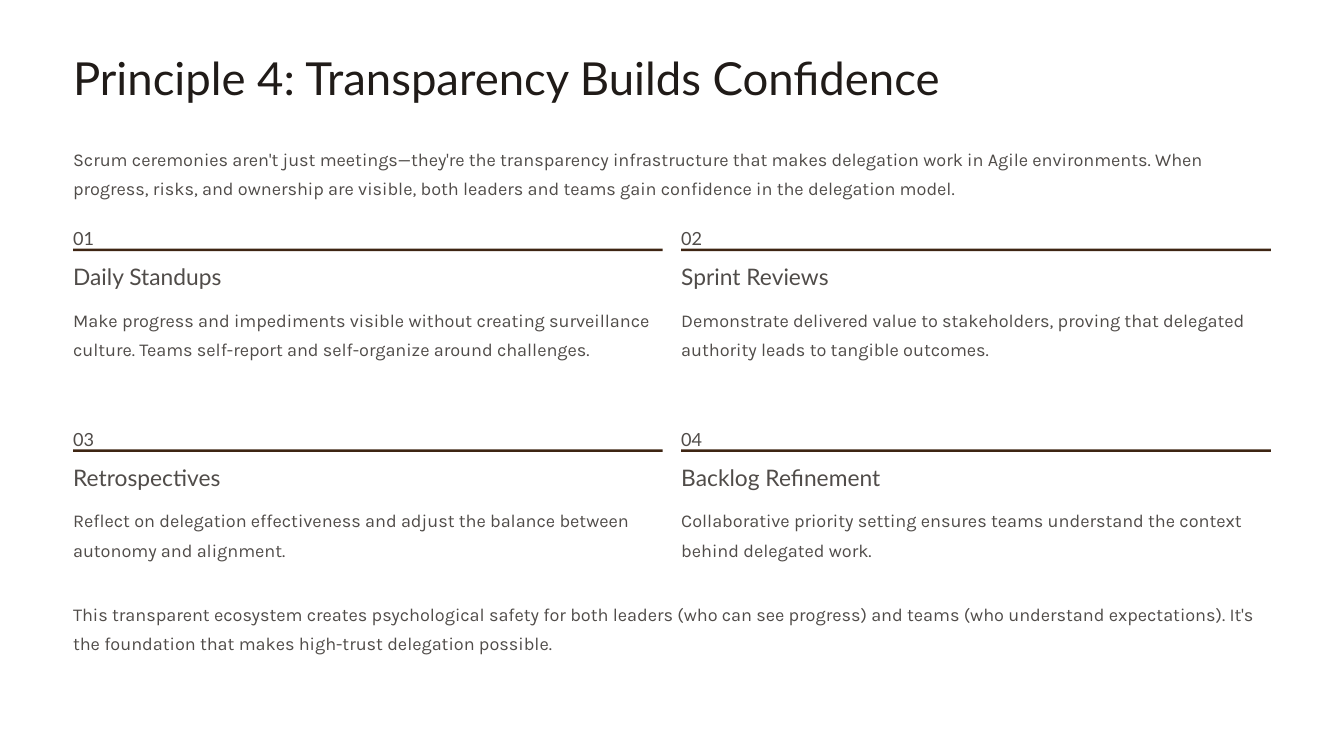
from dataclasses import dataclass

from pptx import Presentation
from pptx import util as u
from pptx.dml.color import RGBColor
from pptx.enum import shapes, text

PX = u.Inches(1) // 100
COLORS = {"title": "201B18", "body": "504C49", "rule": "3E2513"}

LEFT, FULL_WIDTH = 87, 1426
CARD_WIDTH, COLUMN_PITCH = 702, 724
CARDS_TOP, ROW_PITCH = 262, 239


@dataclass(frozen=True)
class Style:
    font: str
    size: float
    leading: float
    color: str
    wrap: bool


@dataclass(frozen=True)
class Ceremony:
    name: str
    description: str


TITLE = Style("Lato", 39, 48.5, "title", False)
NUMBER = Style("Lato", 15.5, 25, "body", False)
HEADING = Style("Lato", 19.5, 24, "body", False)
BODY = Style("Karla", 15.5, 25, "body", True)

INTRO = (
    "Scrum ceremonies aren't just meetings—they're the transparency infrastructure "
    "that makes delegation work in Agile environments. When progress, risks, and "
    "ownership are visible, both leaders and teams gain confidence in the delegation model."
)
CONCLUSION = (
    "This transparent ecosystem creates psychological safety for both leaders (who can "
    "see progress) and teams (who understand expectations). It's the foundation that "
    "makes high-trust delegation possible."
)
CEREMONIES = [
    Ceremony("Daily Standups",
             "Make progress and impediments visible without creating surveillance culture. "
             "Teams self-report and self-organize around challenges."),
    Ceremony("Sprint Reviews",
             "Demonstrate delivered value to stakeholders, proving that delegated authority "
             "leads to tangible outcomes."),
    Ceremony("Retrospectives",
             "Reflect on delegation effectiveness and adjust the balance between autonomy "
             "and alignment."),
    Ceremony("Backlog Refinement",
             "Collaborative priority setting ensures teams understand the context behind "
             "delegated work."),
]


def box(left: int, top: int, width: int, height: int) -> tuple[int, int, int, int]:
    """Convert a px rectangle to EMU."""
    return left * PX, top * PX, width * PX, height * PX


def write(shape, content: str, style: Style) -> None:
    frame = shape.text_frame
    frame.text = content
    frame.auto_size = text.MSO_AUTO_SIZE.NONE
    frame.word_wrap = style.wrap
    frame.vertical_anchor = text.MSO_ANCHOR.TOP
    frame.margin_left = frame.margin_top = frame.margin_right = frame.margin_bottom = 0
    paragraph = frame.paragraphs[0]
    paragraph.alignment = text.PP_ALIGN.LEFT
    paragraph.line_spacing = u.Pt(style.leading)
    font = paragraph.runs[0].font
    font.name, font.size = style.font, u.Pt(style.size)
    font.color.rgb = RGBColor.from_string(COLORS[style.color])


def add_text(slide, area: tuple[int, int, int, int], content: str, style: Style) -> None:
    write(slide.shapes.add_textbox(*box(*area)), content, style)


def add_rule(slide, left: int, top: int) -> None:
    rule = slide.shapes.add_shape(
        shapes.MSO_SHAPE.RECTANGLE, *box(left, top, CARD_WIDTH, 3))
    rule.shadow.inherit = False
    rule.fill.solid()
    rule.fill.fore_color.rgb = RGBColor.from_string(COLORS["rule"])
    rule.line.fill.background()


def add_card(slide, index: int, ceremony: Ceremony) -> None:
    row, column = divmod(index, 2)
    left = LEFT + column * COLUMN_PITCH
    top = CARDS_TOP + row * ROW_PITCH
    add_text(slide, (left, top, 22, 27), f"{index + 1:02}", NUMBER)
    add_rule(slide, left, top + 34)
    add_text(slide, (left, top + 50, 271, 34), ceremony.name, HEADING)
    add_text(slide, (left, top + 97, CARD_WIDTH, 69), ceremony.description, BODY)


def main() -> None:
    deck = Presentation()
    deck.slide_width, deck.slide_height = 1600 * PX, 900 * PX
    slide = deck.slides.add_slide(deck.slide_layouts.get_by_name("Title Only"))

    title = slide.shapes.title
    title.left, title.top, title.width, title.height = box(LEFT, 57, 1169, 68)
    write(title, "Principle 4: Transparency Builds Confidence", TITLE)

    add_text(slide, (LEFT, 168, FULL_WIDTH, 69), INTRO, BODY)
    for index, ceremony in enumerate(CEREMONIES):
        add_card(slide, index, ceremony)
    add_text(slide, (LEFT, 709, FULL_WIDTH, 69), CONCLUSION, BODY)

    deck.save("out.pptx")


if __name__ == "__main__":
    main()
